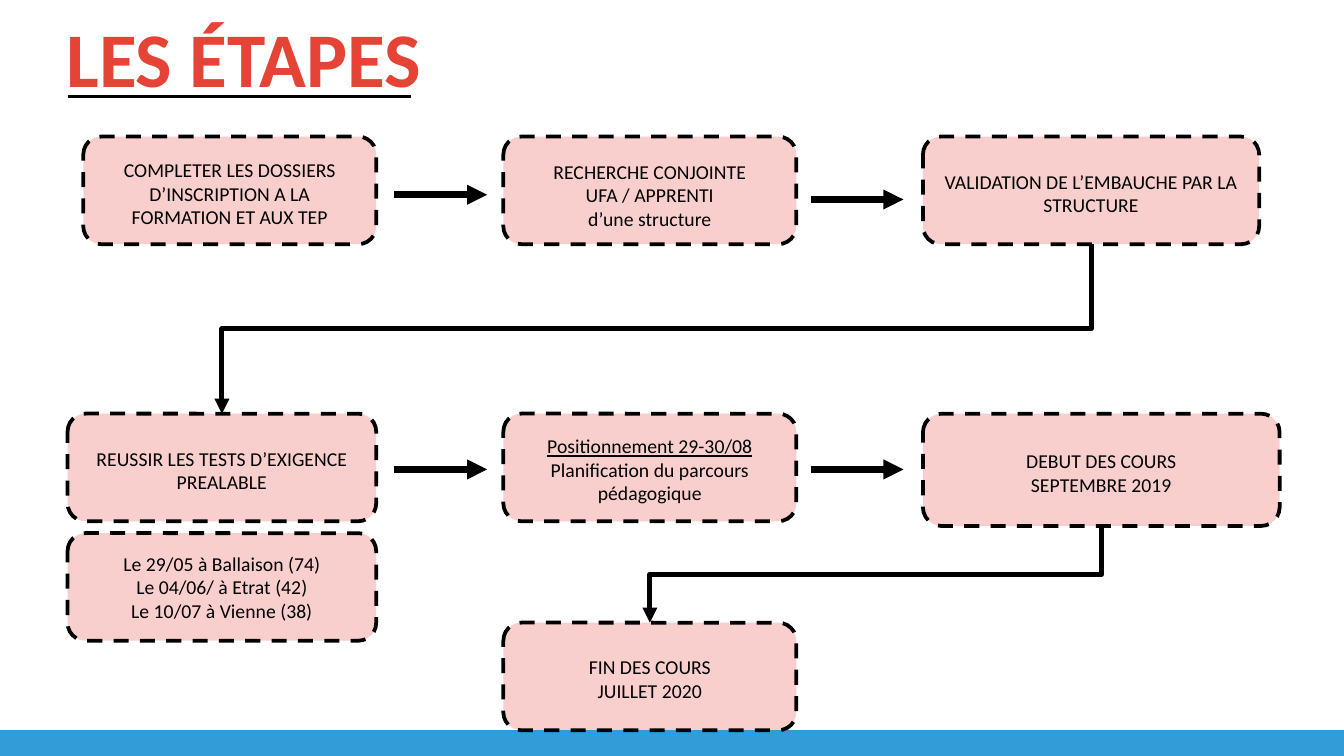
import pptx
import pptx.util
import pptx.dml.color
import pptx.enum.dml
import pptx.enum.shapes
import pptx.enum.text
import pptx.oxml.ns
from lxml import etree

Cm, Pt = pptx.util.Cm, pptx.util.Pt
SHAPE = pptx.enum.shapes.MSO_SHAPE
CONNECTOR = pptx.enum.shapes.MSO_CONNECTOR
ALIGN = pptx.enum.text.PP_ALIGN
ANCHOR = pptx.enum.text.MSO_ANCHOR
qn = pptx.oxml.ns.qn

COLORS = {"red": "E64337", "black": "000000", "blue": "309DD8"}
ROW_1, ROW_2, DATES_TOP, END_TOP = 2.87, 8.69, 11.2, 13.08
COL_1, COL_2, COL_3 = 1.42, 10.57, 19.38
STEP_W, STEP_H = 6.15, 2.26


def color(name):
    return pptx.dml.color.RGBColor.from_string(COLORS[name])


def draw_line(kind, start, end, width, arrow=True):
    line = slide.shapes.add_connector(kind, *[Cm(v) for v in start + end])
    line.line.color.rgb = color("black")
    line.line.width = Pt(width)
    if arrow:
        etree.SubElement(line.line._get_or_add_ln(), qn("a:tailEnd"), type="triangle")
    etree.SubElement(line._element.spPr, qn("a:effectLst"))
    return line


deck = pptx.Presentation()
deck.slide_width, deck.slide_height = Cm(28.22), Cm(15.88)
slide = deck.slides.add_slide(deck.slide_layouts[5])

footer_band = slide.shapes.add_shape(SHAPE.RECTANGLE, 0, Cm(15.34), deck.slide_width, Cm(0.54))
footer_band.shadow.inherit = False
footer_band.fill.solid()
footer_band.fill.fore_color.rgb = color("blue")
footer_band.line.fill.background()

title = slide.shapes.title
title.left, title.top, title.width, title.height = Cm(1.14), Cm(0), Cm(8.48), Cm(2.62)
title.text_frame.text = "LES ÉTAPES"
title.text_frame.auto_size = pptx.enum.text.MSO_AUTO_SIZE.NONE
title.text_frame.vertical_anchor = ANCHOR.MIDDLE
heading = title.text_frame.paragraphs[0]
heading.alignment = ALIGN.LEFT
heading.line_spacing = 0.9
heading_font = heading.runs[0].font
heading_font.name, heading_font.size, heading_font.bold = "Calibri", Pt(46), True
heading_font.color.rgb = color("red")
draw_line(CONNECTOR.STRAIGHT, (COL_1, 2.03), (8.64, 2.03), 1.5, arrow=False)

steps = [
    (1.75, ROW_1, STEP_W, STEP_H, 0.12,
     ["COMPLETER LES DOSSIERS D’INSCRIPTION A LA FORMATION ET AUX TEP"]),
    (COL_2, ROW_1, STEP_W, STEP_H, 0.2,
     ["RECHERCHE CONJOINTE", "UFA / APPRENTI", "d’une structure"]),
    (COL_3, ROW_1, 7.06, STEP_H, 0.12, ["VALIDATION DE L’EMBAUCHE PAR LA STRUCTURE"]),
    (COL_1, ROW_2, 6.48, STEP_H, 0.12, ["REUSSIR LES TESTS D’EXIGENCE PREALABLE"]),
    (COL_2, ROW_2, STEP_W, STEP_H, 0.08, ["Positionnement 29-30/08 "]),
    (COL_3, ROW_2, 7.49, 2.36, 0.12, ["DEBUT DES COURS", "SEPTEMBRE 2019"]),
    (COL_2, END_TOP, STEP_W, STEP_H, 0.08, ["FIN DES COURS", "JUILLET 2020"]),
    (COL_1, DATES_TOP, 6.48, STEP_H, 0,
     ["Le 29/05 à Ballaison (74)", "Le 04/06/ à Etrat (42)", "Le 10/07 à Vienne (38)"]),
]
for left, top, width, height, inset, lines in steps:
    step = slide.shapes.add_shape(SHAPE.ROUNDED_RECTANGLE, Cm(left), Cm(top), Cm(width), Cm(height))
    step.shadow.inherit = False
    step.fill.solid()
    step.fill.fore_color.rgb = color("red")
    tint = step._element.spPr.find(qn("a:solidFill"))[0]
    etree.SubElement(tint, qn("a:alpha"), val="25000")
    step.line.color.rgb = color("black")
    step.line.width = Pt(2.25)
    step.line.dash_style = pptx.enum.dml.MSO_LINE.DASH
    frame = step.text_frame
    frame.word_wrap = True
    frame.vertical_anchor = ANCHOR.MIDDLE
    frame.margin_top, frame.margin_bottom = Cm(inset), Cm(0)
    frame.text = "\n".join(lines)
    if lines[0].startswith("Positionnement"):
        frame.paragraphs[0].runs[0].font.underline = True
        frame.paragraphs[0].add_run().text = "Planification du parcours pédagogique"
    for paragraph in frame.paragraphs:
        paragraph.alignment = ALIGN.CENTER
        for run in paragraph.runs:
            run.font.name, run.font.size = "Calibri", Pt(11.7)
            run.font.color.rgb = color("black")

for arrow_left, arrow_y in [(8.28, 4.09), (17.02, 4.19), (8.28, 9.86), (17.02, 9.86)]:
    draw_line(CONNECTOR.STRAIGHT, (arrow_left, arrow_y), (arrow_left + 1.95, arrow_y), 4)

returns = [
    (COL_3 + 7.06 / 2, ROW_1 + STEP_H, COL_1 + 6.48 / 2, ROW_2),
    (COL_3 + 7.49 / 2, ROW_2 + 2.36, COL_2 + STEP_W / 2, END_TOP),
]
for start_x, start_y, end_x, end_y in returns:
    mid_x, mid_y = (start_x + end_x) / 2, (start_y + end_y) / 2
    half_drop, half_run = (end_y - start_y) / 2, (start_x - end_x) / 2
    turn = draw_line(CONNECTOR.ELBOW, (mid_x - half_drop, mid_y - half_run),
                     (mid_x + half_drop, mid_y + half_run), 3)
    turn._element.spPr.find(qn("a:xfrm")).set("rot", "5400000")

deck.save("out.pptx")
